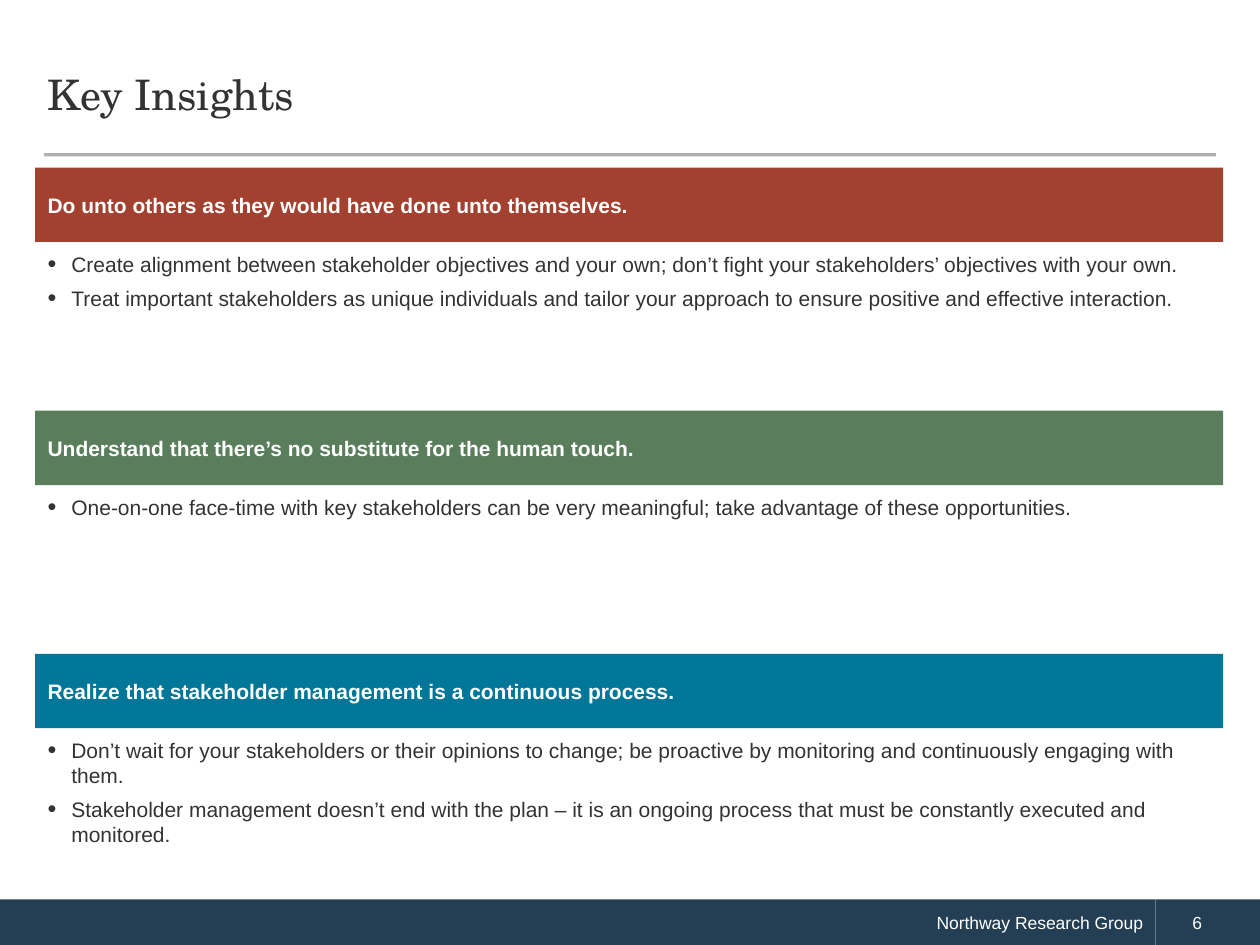
from dataclasses import dataclass

from lxml import etree
from pptx import Presentation
from pptx import util as u
from pptx.dml.color import RGBColor
from pptx.enum import shapes, text
from pptx.oxml.ns import qn

INK, WHITE, NAVY, RULE = "333333", "FFFFFF", "243F54", "45433E"
SLIDE_W, SLIDE_H = 25.4, 19.05
LEFT, WIDTH = 0.71, 23.95
FIRST_TOP, PITCH, BANNER_H, BODY_OFFSET = 3.38, 4.9, 1.5, 1.56
FOOTER_TOP, FOOTER_SPLIT = 18.13, 23.29
BULLET_INDENT = 0.48


@dataclass
class Insight:
    heading: str
    colour: str
    body_height: float
    points: list[str]


INSIGHTS = [
    Insight("Do unto others as they would have done unto themselves.", "A24130", 1.47, [
        "Create alignment between stakeholder objectives and your own; "
        "don’t fight your stakeholders’ objectives with your own.",
        "Treat important stakeholders as unique individuals and tailor your approach "
        "to ensure positive and effective interaction.",
    ]),
    Insight("Understand that there’s no substitute for the human touch.", "5A7D5C", 0.76, [
        "One-on-one face-time with key stakeholders can be very meaningful; "
        "take advantage of these opportunities.",
    ]),
    Insight("Realize that stakeholder management is a continuous process.", "007698", 3.18, [
        "Don’t wait for your stakeholders or their opinions to change; "
        "be proactive by monitoring and continuously engaging with them.",
        "Stakeholder management doesn’t end with the plan – it is an ongoing process "
        "that must be constantly executed and monitored.",
    ]),
]


def rgb(colour: str) -> RGBColor:
    return RGBColor.from_string(colour)


def box(left: float, top: float, width: float, height: float) -> tuple:
    return u.Cm(left), u.Cm(top), u.Cm(width), u.Cm(height)


def write(frame, *lines: str, size=12, colour=INK, font="Arial", bold=False,
          align=text.PP_ALIGN.LEFT, anchor=text.MSO_ANCHOR.MIDDLE,
          indent=0.0, bullets=False, line_spacing=None) -> None:
    frame.word_wrap = True
    frame.vertical_anchor = anchor
    for index, line in enumerate(lines):
        paragraph = frame.add_paragraph() if index else frame.paragraphs[0]
        paragraph.alignment = align
        if line_spacing:
            paragraph.line_spacing = u.Pt(line_spacing)
        run = paragraph.add_run()
        run.text = line
        run.font.name, run.font.size, run.font.bold = font, u.Pt(size), bold
        run.font.color.rgb = rgb(colour)
        if indent:
            paragraph._p.get_or_add_pPr().set("marL", str(u.Cm(indent)))
        if bullets:
            paragraph.space_before = u.Pt(5)
            add_bullet(paragraph, indent, colour)


def add_bullet(paragraph, indent: float, colour: str) -> None:
    properties = paragraph._p.get_or_add_pPr()
    properties.set("indent", str(-u.Cm(indent)))
    bullet_colour = etree.SubElement(properties, qn("a:buClr"))
    etree.SubElement(bullet_colour, qn("a:srgbClr"), val=colour)
    etree.SubElement(properties, qn("a:buSzPct"), val="120000")
    etree.SubElement(properties, qn("a:buFont"), typeface="Arial")
    etree.SubElement(properties, qn("a:buChar"), char="•")


def add_band(slide, bounds: tuple, fill: str, label: str, **text_format) -> None:
    band = slide.shapes.add_shape(shapes.MSO_SHAPE.RECTANGLE, *bounds)
    band.shadow.inherit = False
    band.fill.solid()
    band.fill.fore_color.rgb = rgb(fill)
    band.line.fill.background()
    write(band.text_frame, label, colour=WHITE, **text_format)


def add_title_rule(slide) -> None:
    y = u.Cm(3.12)
    rule = slide.shapes.add_connector(
        shapes.MSO_CONNECTOR.STRAIGHT, u.Cm(0.89), y, u.Cm(24.51), y)
    rule.line.width = u.Pt(1.75)
    rule.line.color.rgb = rgb(RULE)
    properties = rule._element.spPr
    colour = properties.find(".//" + qn("a:srgbClr"))
    etree.SubElement(colour, qn("a:alpha"), val="42000")
    etree.SubElement(properties, qn("a:effectLst"))


def add_insight(slide, insight: Insight, top: float) -> None:
    add_band(slide, box(LEFT, top, WIDTH, BANNER_H), insight.colour, insight.heading, bold=True)
    body = slide.shapes.add_textbox(*box(LEFT, top + BODY_OFFSET, WIDTH, insight.body_height))
    write(body.text_frame, *insight.points, anchor=text.MSO_ANCHOR.TOP,
          indent=BULLET_INDENT, bullets=True)
    body.text_frame.auto_size = text.MSO_AUTO_SIZE.SHAPE_TO_FIT_TEXT


def main() -> None:
    deck = Presentation()
    deck.slide_width, deck.slide_height = u.Cm(SLIDE_W), u.Cm(SLIDE_H)
    slide = deck.slides.add_slide(deck.slide_layouts[5])

    title = slide.shapes.title
    title.left, title.top, title.width, title.height = box(LEFT, 0.74, WIDTH, 2.39)
    title.text_frame.auto_size = text.MSO_AUTO_SIZE.NONE
    write(title.text_frame, "Key Insights", size=24, font="TeX Gyre Schola", line_spacing=26)

    footer_h = SLIDE_H - FOOTER_TOP
    add_band(slide, box(0, FOOTER_TOP, FOOTER_SPLIT, footer_h), NAVY,
             "Northway Research Group", size=10, align=text.PP_ALIGN.RIGHT)
    add_band(slide, box(FOOTER_SPLIT, FOOTER_TOP, SLIDE_W - FOOTER_SPLIT, footer_h), NAVY,
             "6", size=10, indent=0.5)
    add_title_rule(slide)

    for row, insight in enumerate(INSIGHTS):
        add_insight(slide, insight, FIRST_TOP + row * PITCH)

    deck.save("out.pptx")


if __name__ == "__main__":
    main()
